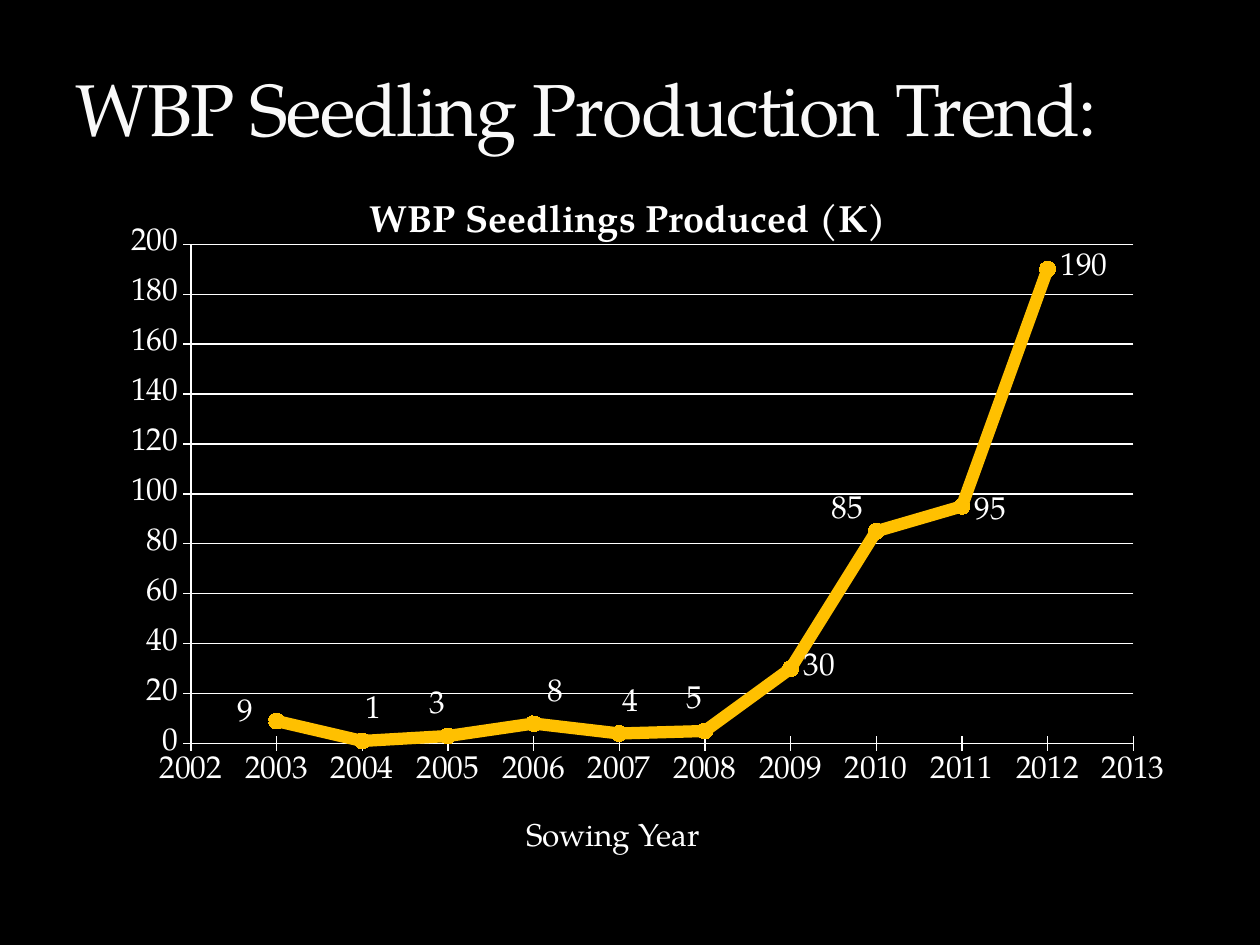
from lxml import etree
from pptx import Presentation
from pptx import util as u
from pptx.chart.data import CategoryChartData
from pptx.dml.color import RGBColor
from pptx.enum import chart as ch
from pptx.enum import text
from pptx.oxml.ns import qn

BLACK = RGBColor(0x00, 0x00, 0x00)
WHITE = RGBColor(0xFF, 0xFF, 0xFF)
OFF_WHITE = RGBColor(0xF9, 0xF9, 0xF9)
GOLD = RGBColor(0xFF, 0xC0, 0x00)
FONT = "TeX Gyre Pagella"

SERIES_NAME = "WBP Seedlings Produced (K)"
YEARS = [str(year) for year in range(2002, 2014)]
SEEDLINGS = [None, 9, 1, 3, 8, 4, 5, 30, 85, 95, 190, None]

LEFT = ch.XL_LABEL_POSITION.LEFT
RIGHT = ch.XL_LABEL_POSITION.RIGHT
ABOVE = ch.XL_LABEL_POSITION.ABOVE
# year: side of the point, then shift as a share of the chart's width and height
LABELS = {
    "2003": (LEFT, -0.01, -0.01),
    "2004": (ABOVE, 0.01, 0),
    "2005": (ABOVE, -0.01, 0),
    "2006": (ABOVE, 0.02, 0),
    "2007": (ABOVE, 0.01, 0),
    "2008": (ABOVE, -0.01, 0),
    "2009": (RIGHT, 0, 0),
    "2010": (LEFT, 0, -0.03),
    "2011": (RIGHT, 0, 0.01),
    "2012": (RIGHT, 0, 0),
}


def set_font(font, size, color, **extra):
    values = {"name": FONT, "size": u.Pt(size), "bold": False, **extra}
    for name, value in values.items():
        setattr(font, name, value)
    font.color.rgb = color


def make_layout(**values):
    """Return a c:layout element that holds the given manual values."""
    layout = etree.Element(qn("c:layout"))
    manual = etree.SubElement(layout, qn("c:manualLayout"))
    for name, value in values.items():
        etree.SubElement(manual, qn(f"c:{name}")).set("val", str(value))
    return layout


def place(shape, box):
    shape.left, shape.top, shape.width, shape.height = map(u.Inches, box)


def add_heading(page, box):
    title = page.shapes.title
    place(title, box)
    frame = title.text_frame
    frame.vertical_anchor = text.MSO_ANCHOR.BOTTOM
    para = frame.paragraphs[0]
    para.alignment = text.PP_ALIGN.LEFT
    span = para.add_run()
    span.text = "WBP Seedling Production Trend:"
    set_font(span.font, 42, OFF_WHITE)
    span.font._element.set("spc", "-100")


def style_axes(chart):
    years, amounts = chart.category_axis, chart.value_axis
    formats = {
        years: {"major_tick_mark": ch.XL_TICK_MARK.CROSS,
                "tick_label_position": ch.XL_TICK_LABEL_POSITION.LOW},
        amounts: {"major_tick_mark": ch.XL_TICK_MARK.OUTSIDE,
                  "minimum_scale": 0, "maximum_scale": 200,
                  "major_unit": 20, "has_major_gridlines": True},
    }
    for axis, values in formats.items():
        for name, value in values.items():
            setattr(axis, name, value)
        axis.format.line.color.rgb = WHITE
    amounts.major_gridlines.format.line.color.rgb = WHITE
    # points sit on the tick marks, so the first year falls on the axis
    between = etree.Element(qn("c:crossBetween"))
    between.set("val", "midCat")
    amounts._element.xpath("c:crossAx | c:crosses")[-1].addnext(between)


def style_series(series):
    series.smooth = False
    series.format.line.color.rgb = GOLD
    series.format.line.width = u.Pt(7)
    marker = series.marker
    marker.style = ch.XL_MARKER_STYLE.CIRCLE
    marker.size = 9
    marker.format.fill.solid()
    marker.format.fill.fore_color.rgb = GOLD
    marker.format.line.color.rgb = GOLD

    labels = series.data_labels
    labels.show_value = True
    labels.number_format = "#,##0"
    labels.number_format_is_linked = False
    for year, (side, x, y) in LABELS.items():
        series.points[YEARS.index(year)].data_label.position = side
        if x or y:
            index = labels._element.xpath(
                f"c:dLbl/c:idx[@val='{YEARS.index(year)}']")[0]
            index.addnext(make_layout(x=x, y=y))


def add_trend_chart(page, box):
    data = CategoryChartData(number_format="#,##0")
    data.categories = YEARS
    data.add_series(SERIES_NAME, SEEDLINGS)
    chart = page.shapes.add_chart(
        ch.XL_CHART_TYPE.LINE_MARKERS, *map(u.Inches, box), data).chart
    set_font(chart.font, 18, WHITE)
    chart.has_legend = False
    chart.plots[0].vary_by_categories = False

    chart.has_title = True
    span = chart.chart_title.text_frame.paragraphs[0].add_run()
    span.text = SERIES_NAME
    set_font(span.font, 21.6, WHITE, bold=True)
    title = chart.chart_title._element
    for old in title.findall(qn("c:layout")):
        title.remove(old)
    title.find(qn("c:tx")).addnext(
        make_layout(xMode="edge", yMode="edge", x=0.25, y=0.04))

    area = chart._chartSpace.find(f".//{qn('c:plotArea')}")
    for old in area.findall(qn("c:layout")):
        area.remove(old)
    area.insert(0, make_layout(layoutTarget="inner", xMode="edge",
                               yMode="edge", x=0.09, y=0.12, w=0.88, h=0.78))
    style_axes(chart)
    style_series(chart.plots[0].series[0])


def add_axis_caption(page, box):
    frame = page.shapes.add_textbox(*map(u.Inches, box)).text_frame
    frame.word_wrap = True
    span = frame.paragraphs[0].add_run()
    span.text = "Sowing Year"
    set_font(span.font, 18, WHITE)


def main():
    deck = Presentation()
    deck.slide_width, deck.slide_height = u.Inches(10), u.Inches(7.5)
    page = deck.slides.add_slide(deck.slide_layouts.get_by_name("Title Only"))
    page.background.fill.solid()
    page.background.fill.fore_color.rgb = BLACK
    add_heading(page, (0.5, 0.25, 9, 1))
    add_trend_chart(page, (0.75, 1.33, 8.5, 5.08))
    add_axis_caption(page, (4.08, 6.42, 1.92, 0.71))
    deck.save("out.pptx")


if __name__ == "__main__":
    main()
